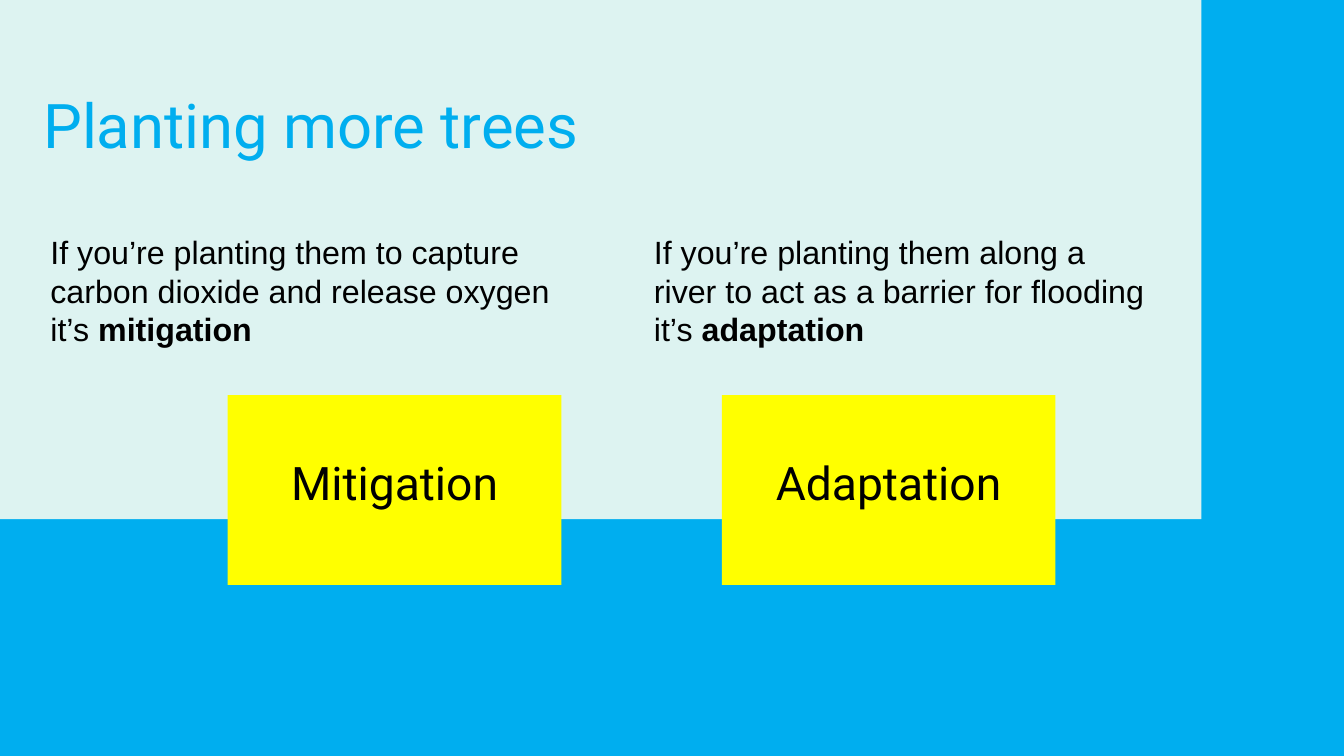
import pptx
import pptx.dml.color
import pptx.enum.shapes
import pptx.enum.text
import pptx.util

Cm = pptx.util.Cm
BLUE = pptx.dml.color.RGBColor(0x00, 0xAE, 0xEF)
MINT = pptx.dml.color.RGBColor(0xDD, 0xF3, 0xF1)
YELLOW = pptx.dml.color.RGBColor(0xFF, 0xFF, 0x00)
BLACK = pptx.dml.color.RGBColor(0x00, 0x00, 0x00)

CARD_TOP, CARD_WIDTH, CARD_HEIGHT = 9.96, 8.41, 4.78
EXPLANATION_TOP, EXPLANATION_HEIGHT = 5.61, 3.45
COLUMNS = [
    (1.02, 13.31, "If you’re planting them to capture carbon dioxide and release oxygen it’s ",
     "mitigation", 5.74, "Mitigation"),
    (16.23, 13.0, "If you’re planting them along a river to act as a barrier for flooding it’s ",
     "adaptation", 18.19, "Adaptation"),
]


def add_rectangle(slide, left, top, width, height, color):
    shape = slide.shapes.add_shape(
        pptx.enum.shapes.MSO_SHAPE.RECTANGLE, Cm(left), Cm(top), Cm(width), Cm(height))
    shape.shadow.inherit = False
    shape.fill.solid()
    shape.fill.fore_color.rgb = color
    shape.line.fill.background()


def add_text(slide, left, top, width, height, runs, size, font_name, color=BLACK):
    text_box = slide.shapes.add_textbox(Cm(left), Cm(top), Cm(width), Cm(height))
    frame = text_box.text_frame
    frame.word_wrap = True
    frame.auto_size = pptx.enum.text.MSO_AUTO_SIZE.SHAPE_TO_FIT_TEXT
    frame.margin_left = frame.margin_right = Cm(0.25)
    frame.margin_top = frame.margin_bottom = Cm(0.25)
    paragraph = frame.paragraphs[0]
    for text, bold in runs:
        run = paragraph.add_run()
        run.text = text
        run.font.size = pptx.util.Pt(size)
        run.font.name = font_name
        run.font.bold = bold
        run.font.color.rgb = color
    return paragraph


def add_title(slide, left, top, width, height):
    paragraph = add_text(slide, left, top, width, height,
                         [("Planting more trees", False)], 44, "Roboto", BLUE)
    paragraph.line_spacing = 0.9


def add_explanation(slide, left, top, width, height, sentence, term):
    add_text(slide, left, top, width, height, [(sentence, False), (term, True)], 23, "Arial")


def add_card(slide, left, top, width, height, label):
    add_rectangle(slide, left, top, width, height, YELLOW)
    paragraph = add_text(slide, left, top + 1.24, width, 1.93, [(label, False)], 33, "Roboto")
    paragraph.alignment = pptx.enum.text.PP_ALIGN.CENTER


def main():
    presentation = pptx.Presentation()
    presentation.slide_width = Cm(33.87)
    presentation.slide_height = Cm(19.05)
    slide = presentation.slides.add_slide(presentation.slide_layouts[6])
    slide.background.fill.solid()
    slide.background.fill.fore_color.rgb = BLUE

    add_rectangle(slide, 0, 0, 30.28, 13.08, MINT)
    add_title(slide, 0.84, 2.16, 28.63, 2.21)
    for text_left, text_width, sentence, term, card_left, label in COLUMNS:
        add_explanation(slide, text_left, EXPLANATION_TOP, text_width, EXPLANATION_HEIGHT,
                        sentence, term)
        add_card(slide, card_left, CARD_TOP, CARD_WIDTH, CARD_HEIGHT, label)
    presentation.save("out.pptx")


if __name__ == "__main__":
    main()
